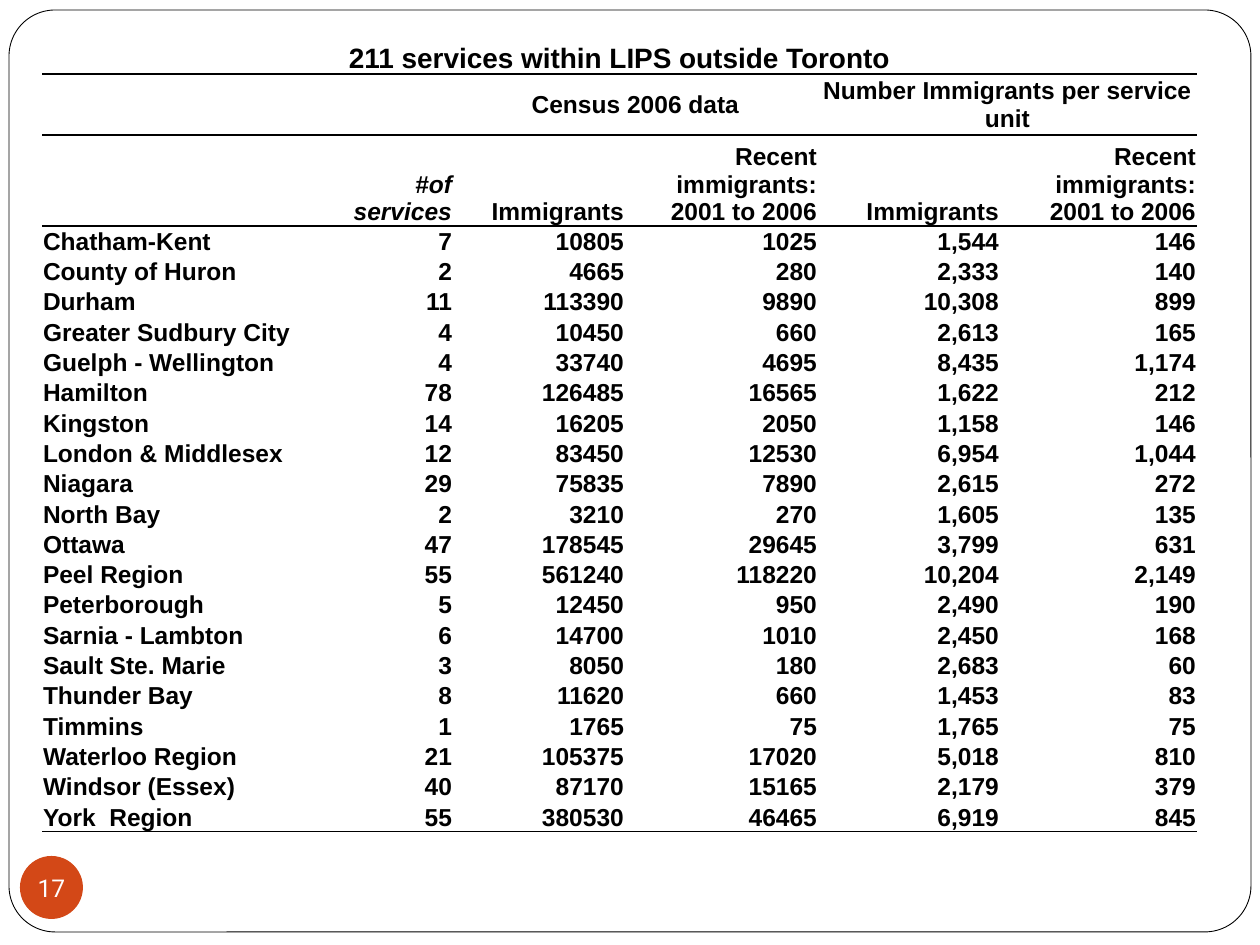
from lxml import etree
from pptx import Presentation
from pptx.dml.color import RGBColor
from pptx.enum.shapes import MSO_SHAPE
from pptx.enum.text import MSO_ANCHOR, PP_ALIGN
from pptx.oxml.ns import qn
from pptx.util import Pt

ROUND, OVAL = MSO_SHAPE.ROUNDED_RECTANGLE, MSO_SHAPE.OVAL
MIDDLE, BOTTOM = MSO_ANCHOR.MIDDLE, MSO_ANCHOR.BOTTOM
LEFT, CENTER, RIGHT = PP_ALIGN.LEFT, PP_ALIGN.CENTER, PP_ALIGN.RIGHT

SCALE = 914400 / 126
COLORS = {"ink": "000000", "paper": "FFFFFF", "badge": "D34817"}

COLS = [276, 135, 172, 193, 182, 197]
HEADS = [32, 61, 91]
BODY = 606  # height of all the data rows

TITLE = "211 services within LIPS outside Toronto"
GROUPS = ["", "", "Census 2006 data", "", "Number Immigrants per service unit", ""]
RECENT = "Recent immigrants: 2001 to 2006"
LABELS = ["", "#of services", "Immigrants", RECENT, "Immigrants", RECENT]
DATA = [
    ("Chatham-Kent", "7", "10805", "1025", "1,544", "146"),
    ("County of Huron", "2", "4665", "280", "2,333", "140"),
    ("Durham", "11", "113390", "9890", "10,308", "899"),
    ("Greater Sudbury City", "4", "10450", "660", "2,613", "165"),
    ("Guelph - Wellington", "4", "33740", "4695", "8,435", "1,174"),
    ("Hamilton", "78", "126485", "16565", "1,622", "212"),
    ("Kingston", "14", "16205", "2050", "1,158", "146"),
    ("London & Middlesex", "12", "83450", "12530", "6,954", "1,044"),
    ("Niagara", "29", "75835", "7890", "2,615", "272"),
    ("North Bay", "2", "3210", "270", "1,605", "135"),
    ("Ottawa", "47", "178545", "29645", "3,799", "631"),
    ("Peel Region", "55", "561240", "118220", "10,204", "2,149"),
    ("Peterborough", "5", "12450", "950", "2,490", "190"),
    ("Sarnia - Lambton", "6", "14700", "1010", "2,450", "168"),
    ("Sault Ste. Marie", "3", "8050", "180", "2,683", "60"),
    ("Thunder Bay", "8", "11620", "660", "1,453", "83"),
    ("Timmins", "1", "1765", "75", "1,765", "75"),
    ("Waterloo Region", "21", "105375", "17020", "5,018", "810"),
    ("Windsor (Essex)", "40", "87170", "15165", "2,179", "379"),
    ("York  Region", "55", "380530", "46465", "6,919", "845"),
]


def px(n):
    return round(n * SCALE)


def rgb(name):
    return RGBColor.from_string(COLORS[name])


def style(para, size, face, color, align, bold=False, italic=False):
    para.alignment = align
    font = para.font
    font.size, font.name = Pt(size), face
    font.bold, font.italic = bold, italic
    font.color.rgb = rgb(color)


def add_shape(slide, kind, box, fill, line=None):
    shape = slide.shapes.add_shape(kind, *map(px, box))
    shape.shadow.inherit = False
    shape.fill.solid()
    shape.fill.fore_color.rgb = rgb(fill)
    if line:
        shape.line.color.rgb = rgb(line)
        shape.line.width = Pt(0.5)
    else:
        shape.line.fill.background()
    return shape


def add_rules(cell, top, bottom):
    props = cell._tc.get_or_add_tcPr()
    for tag, shown in (("lnL", False), ("lnR", False), ("lnT", top), ("lnB", bottom)):
        line = etree.SubElement(props, qn("a:" + tag), w=str(Pt(1)))
        if shown:
            fill = etree.SubElement(line, qn("a:solidFill"))
            etree.SubElement(fill, qn("a:srgbClr"), val=COLORS["ink"])
        else:
            etree.SubElement(line, qn("a:noFill"))


def fill_cell(cell, text, size, align, anchor, italic, top, bottom):
    add_rules(cell, top, bottom)
    cell.fill.background()
    cell.margin_left = cell.margin_right = cell.margin_top = px(1)
    cell.margin_bottom = 0
    cell.vertical_anchor = anchor
    cell.text = text
    style(cell.text_frame.paragraphs[0], size, "Arial", "ink", align, True, italic)


def add_grid(slide):
    rows = [[TITLE] + [""] * 5, GROUPS, LABELS, *DATA]
    count = len(DATA)
    edges = [BODY * i // count for i in range(count + 1)]
    sizes = HEADS + [b - a for a, b in zip(edges, edges[1:])]
    box = (42, 42, sum(COLS), sum(sizes))
    table = slide.shapes.add_table(len(rows), len(COLS), *map(px, box)).table
    table.first_row = table.horz_banding = False
    for col, width in zip(table.columns, COLS):
        col.width = px(width)
    for row, height in zip(table.rows, sizes):
        row.height = px(height)

    # Rules run under the three heading rows and the last row
    ruled = {0, 1, 2, len(rows) - 1}
    for r, row in enumerate(rows):
        for c, text in enumerate(row):
            if r < 2:
                align = CENTER
            else:
                align = RIGHT if c else LEFT
            fill_cell(table.cell(r, c), text, 14 if r else 16, align,
                      MIDDLE if r == 1 else BOTTOM, (r, c) == (2, 1),
                      r - 1 in ruled, r in ruled)

    # Headings across several columns
    for r, first, last in ((0, 0, 5), (1, 2, 3), (1, 4, 5)):
        table.cell(r, first).merge(table.cell(r, last))


def add_badge(slide):
    shape = add_shape(slide, OVAL, (20, 856, 63, 63), "badge")
    frame = shape.text_frame
    frame.margin_left = frame.margin_right = 0
    frame.margin_top = frame.margin_bottom = 0
    frame.word_wrap = False
    frame.vertical_anchor = MIDDLE
    frame.text = "17"
    style(frame.paragraphs[0], 14, "Roboto", "paper", CENTER)


def main():
    deck = Presentation()
    deck.slide_width, deck.slide_height = px(1260), px(945)
    slide = deck.slides.add_slide(deck.slide_layouts[6])
    # Page frame
    frame = add_shape(slide, ROUND, (9, 10, 1242, 922), "paper", "ink")
    frame.adjustments[0] = 0.05
    # Table and page number
    add_grid(slide)
    add_badge(slide)
    deck.save("out.pptx")


if __name__ == "__main__":
    main()
